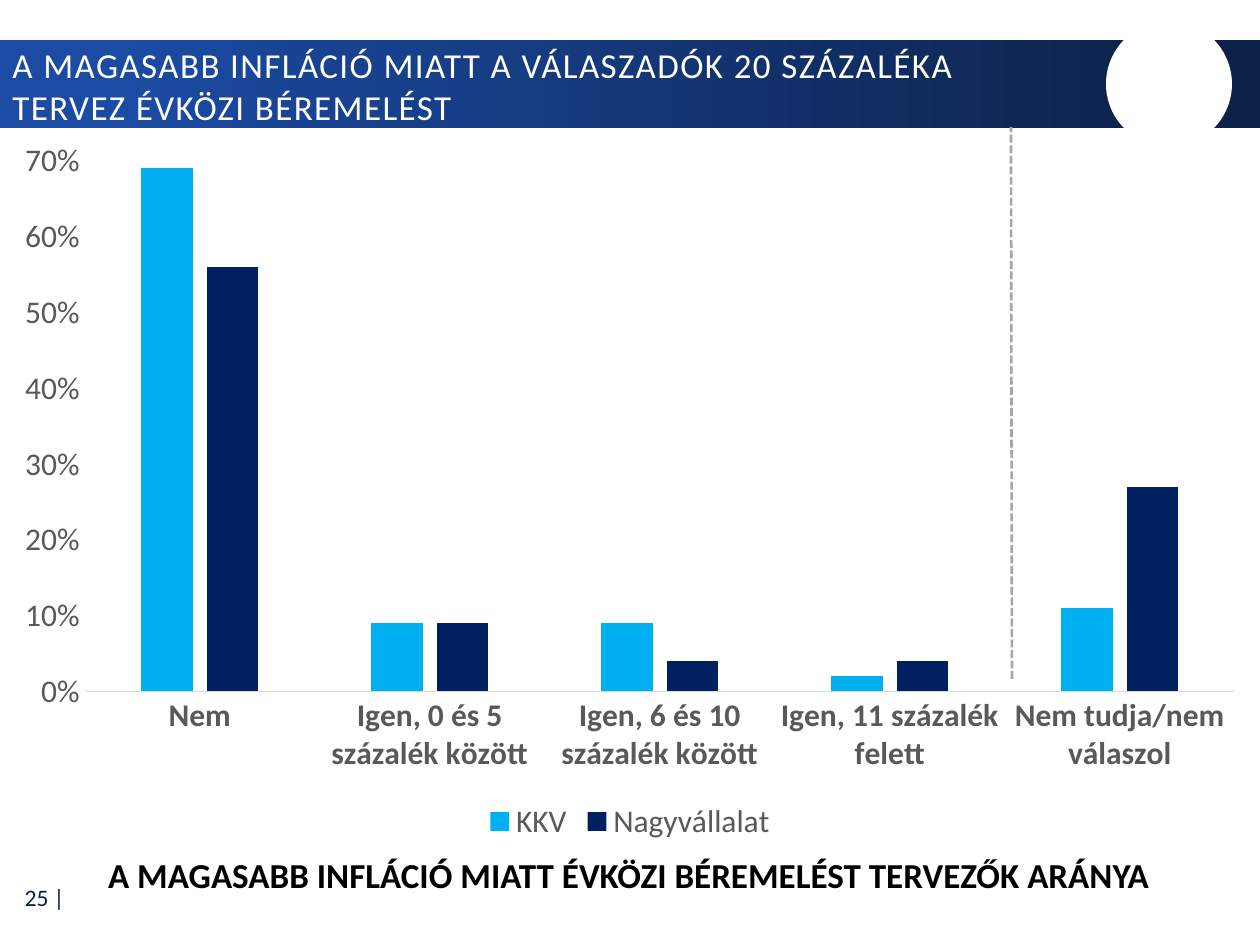
from dataclasses import dataclass

from lxml.etree import SubElement
from pptx import Presentation
from pptx.chart.data import CategoryChartData as ChartData
from pptx.dml.color import RGBColor as RGB
from pptx.enum.chart import XL_CHART_TYPE as Kind, XL_LEGEND_POSITION as Legend
from pptx.enum.chart import XL_TICK_MARK as Tick
from pptx.enum.dml import MSO_LINE as Dash
from pptx.enum.shapes import MSO_CONNECTOR as Wire, MSO_SHAPE as Shape
from pptx.enum.text import MSO_ANCHOR as Anchor, PP_ALIGN as Align
from pptx.oxml.ns import qn
from pptx.util import Emu, Pt

FONT = "Calibri"
BLUE = RGB(0x1B, 0x4B, 0xA3)
NAVY = RGB(0x0C, 0x21, 0x48)
SKY = RGB(0x00, 0xB0, 0xF0)
DEEP = RGB(0x00, 0x20, 0x60)
WHITE = RGB(0xFF, 0xFF, 0xFF)
BLACK = RGB(0x00, 0x00, 0x00)
GREY = RGB(0x59, 0x59, 0x59)
RULE = RGB(0xD9, 0xD9, 0xD9)
DASH = RGB(0xA6, 0xA6, 0xA6)


@dataclass
class Label:
    text: str
    box: tuple[int, int, int, int]
    size: float
    color: RGB
    align: Align = Align.LEFT
    anchor: Anchor = Anchor.MIDDLE
    bold: bool = False
    gap: int = 0  # letter spacing, hundredths of a point


@dataclass
class Series:
    name: str
    vals: tuple[float, ...]
    color: RGB


LABELS = [
    Label("25 |", (1, 874, 76, 47), 13.5, NAVY, Align.RIGHT),
    Label("A MAGASABB INFLÁCIÓ MIATT A VÁLASZADÓK 20 SZÁZALÉKA "
          "TERVEZ ÉVKÖZI BÉREMELÉST", (0, 43, 1080, 84), 20, WHITE, gap=80),
    Label("A MAGASABB INFLÁCIÓ MIATT ÉVKÖZI BÉREMELÉST TERVEZŐK ARÁNYA",
          (94, 847, 1070, 55), 20, BLACK, Align.CENTER, Anchor.TOP, True),
]
CATS = ["Nem", "Igen, 0 és 5 százalék között", "Igen, 6 és 10 százalék között",
        "Igen, 11 százalék felett", "Nem tudja/nem válaszol"]
SERIES = [
    Series("KKV", (0.69, 0.09, 0.09, 0.02, 0.11), SKY),
    Series("Nagyvállalat", (0.56, 0.09, 0.04, 0.04, 0.27), DEEP),
]


def px(*vals: int) -> list[Emu]:
    return [Emu(round(v * 914400 / 126)) for v in vals]


def style(font, size: float, color: RGB, bold: bool = False) -> None:
    font.name, font.size, font.bold = FONT, Pt(size), bold
    font.color.rgb = color


def add_label(slide, item: Label) -> None:
    frame = slide.shapes.add_textbox(*px(*item.box)).text_frame
    frame.word_wrap = True
    frame.vertical_anchor = item.anchor
    para = frame.paragraphs[0]
    run = para.add_run()
    run.text = item.text
    para.alignment = item.align
    style(para.font, item.size, item.color, item.bold)
    if item.gap:
        run.font._element.set("spc", str(item.gap))


def add_plain(slide, kind: Shape, *box: int):
    shape = slide.shapes.add_shape(kind, *px(*box))
    shape.shadow.inherit = False
    shape.line.fill.background()
    return shape


def add_band(slide) -> None:
    fill = add_plain(slide, Shape.RECTANGLE, 0, 40, 1260, 88).fill
    fill.gradient()
    fill.gradient_angle = 0
    for stop, color, pos in zip(fill.gradient_stops, (BLUE, NAVY), (0.09, 0.95)):
        stop.color.rgb, stop.position = color, pos
    disc = add_plain(slide, Shape.OVAL, 1106, 21, 126, 126)
    disc.fill.solid()
    disc.fill.fore_color.rgb = WHITE


def add_split(slide) -> None:
    wire = slide.shapes.add_connector(Wire.STRAIGHT, *px(1012, 679, 1011, 127))
    wire.line.color.rgb = DASH
    wire.line.width = Pt(1.5)
    wire.line.dash_style = Dash.SQUARE_DOT
    SubElement(wire._element.spPr, qn("a:effectLst"))


def add_bars(slide) -> None:
    data = ChartData(number_format="0%")
    data.categories = CATS
    for item in SERIES:
        data.add_series(item.name, item.vals)
    chart = slide.shapes.add_chart(
        Kind.COLUMN_CLUSTERED, *px(0, 127, 1260, 720), data).chart
    style(chart.font, 18, BLACK)
    chart.has_title = False

    # Bars
    plot = chart.plots[0]
    plot.gap_width, plot.overlap = 219, -27
    plot.vary_by_categories = False
    for bars, item in zip(plot.series, SERIES):
        bars.format.fill.solid()
        bars.format.fill.fore_color.rgb = item.color

    # Axes
    cat, val = chart.category_axis, chart.value_axis
    for axis in (cat, val):
        axis.major_tick_mark = axis.minor_tick_mark = Tick.NONE
        axis.has_major_gridlines = False
        style(axis.tick_labels.font, 18, GREY, axis is cat)
    cat.format.line.color.rgb = RULE
    cat.format.line.width = Pt(0.75)
    val.format.line.fill.background()
    val.minimum_scale, val.maximum_scale, val.major_unit = 0, 0.7, 0.1
    val.tick_labels.number_format = "0%"
    val.tick_labels.number_format_is_linked = False

    # Legend
    chart.has_legend = True
    chart.legend.position = Legend.BOTTOM
    chart.legend.include_in_layout = False
    style(chart.legend.font, 18, GREY)


def main() -> None:
    deck = Presentation()
    deck.slide_width, deck.slide_height = px(1260, 945)
    slide = deck.slides.add_slide(deck.slide_layouts[6])
    add_band(slide)
    for item in LABELS:
        add_label(slide, item)
    add_split(slide)
    add_bars(slide)
    deck.save("out.pptx")


if __name__ == "__main__":
    main()
